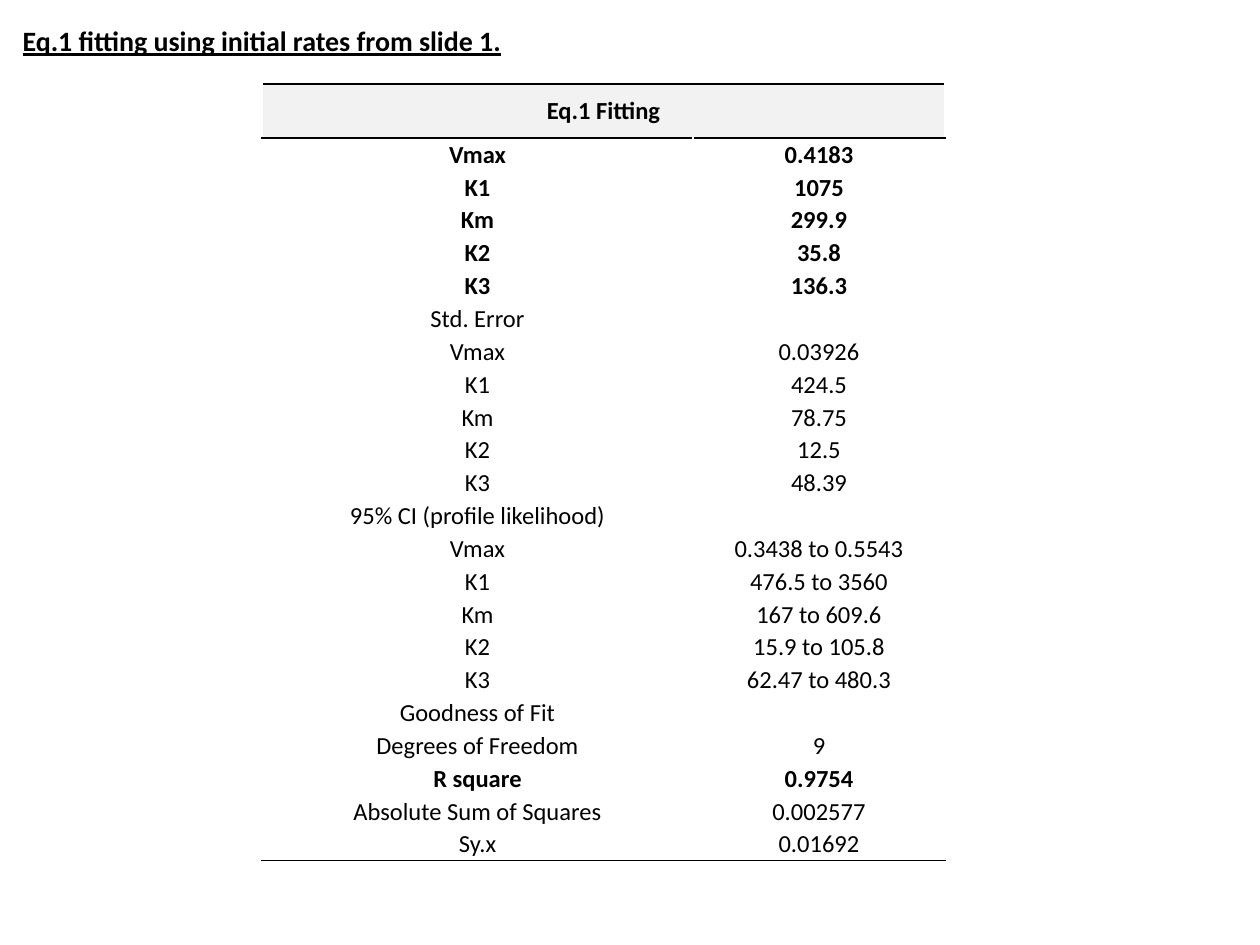
from lxml.etree import SubElement
from pptx import Presentation
from pptx.dml.color import RGBColor
from pptx.enum.text import MSO_ANCHOR, MSO_AUTO_SIZE, PP_ALIGN
from pptx.oxml.ns import qn
from pptx.util import Pt

PX = 914400 / 126
FONT, BLACK, WHITE, HEADER_FILL = "Calibri", "000000", "FFFFFF", "F2F2F2"
CELL_SIZE = 14

TITLE = "Eq.1 fitting using initial rates from slide 1."
HEADER = "Eq.1 Fitting"
PARAMETERS = ["Vmax", "K1", "Km", "K2", "K3"]
BEST_FIT = ["0.4183", "1075", "299.9", "35.8", "136.3"]
STD_ERROR = ["0.03926", "424.5", "78.75", "12.5", "48.39"]
INTERVALS = ["0.3438 to 0.5543", "476.5 to 3560", "167 to 609.6",
             "15.9 to 105.8", "62.47 to 480.3"]
GOODNESS = [("Degrees of Freedom", "9"), ("R square", "0.9754"),
            ("Absolute Sum of Squares", "0.002577"), ("Sy.x", "0.01692")]
ROWS = [
    (HEADER, ""),
    *zip(PARAMETERS, BEST_FIT),
    ("Std. Error", ""),
    *zip(PARAMETERS, STD_ERROR),
    ("95% CI (profile likelihood)", ""),
    *zip(PARAMETERS, INTERVALS),
    ("Goodness of Fit", ""),
    *GOODNESS,
]
BOLD_ROWS = {*range(len(PARAMETERS) + 1), ROWS.index(("R square", "0.9754"))}
COLUMN_WIDTHS = [431, 252]
TABLE_LEFT, TABLE_TOP, TABLE_HEIGHT, HEADER_HEIGHT = 262, 84, 777, 54


def px(length):
    return round(length * PX)


def color(value):
    return RGBColor.from_string(value)


def style_font(font, size, bold):
    font.name, font.size, font.bold = FONT, Pt(size), bold
    font.color.rgb = color(BLACK)


def set_borders(cell, top, bottom):
    properties = cell._tc.get_or_add_tcPr()
    for side, value in (("L", WHITE), ("R", WHITE), ("T", top), ("B", bottom)):
        line = SubElement(properties, qn(f"a:ln{side}"), w=str(Pt(1)))
        fill = SubElement(line, qn("a:solidFill"))
        SubElement(fill, qn("a:srgbClr"), val=value)


def fill_cell(cell, text, bold):
    cell.vertical_anchor = MSO_ANCHOR.MIDDLE
    cell.margin_left = cell.margin_right = cell.margin_top = px(1)
    cell.margin_bottom = 0
    cell.text_frame.text = text
    paragraph = cell.text_frame.paragraphs[0]
    paragraph.alignment = PP_ALIGN.CENTER
    for run in paragraph.runs:
        style_font(run.font, CELL_SIZE, bold)
    if not text:
        end = SubElement(paragraph._p, qn("a:endParaRPr"))
        end.set("sz", str(CELL_SIZE * 100))


def add_title(slide):
    title = slide.shapes.title
    title.left, title.top, title.width, title.height = map(px, (10, 17, 510, 46))
    frame = title.text_frame
    frame.text = TITLE
    frame.word_wrap = False
    frame.auto_size = MSO_AUTO_SIZE.SHAPE_TO_FIT_TEXT
    frame.vertical_anchor = MSO_ANCHOR.TOP
    paragraph = frame.paragraphs[0]
    paragraph.alignment = PP_ALIGN.LEFT
    style_font(paragraph.runs[0].font, 16, True)
    paragraph.runs[0].font.underline = True


def add_fit_table(slide):
    table = slide.shapes.add_table(
        len(ROWS), len(COLUMN_WIDTHS), px(TABLE_LEFT), px(TABLE_TOP),
        px(sum(COLUMN_WIDTHS)), px(TABLE_HEIGHT)).table
    table.first_row = table.horz_banding = False
    for column, width in zip(table.columns, COLUMN_WIDTHS):
        column.width = px(width)
    last = len(ROWS) - 1
    for index, texts in enumerate(ROWS):
        table.rows[index].height = px(
            (TABLE_HEIGHT - HEADER_HEIGHT) / last if index else HEADER_HEIGHT)
        top = BLACK if index <= 1 else WHITE
        bottom = BLACK if index in (0, last) else WHITE
        for cell, text in zip(table.rows[index].cells, texts):
            fill_cell(cell, text, index in BOLD_ROWS)
            set_borders(cell, top, bottom)
            if index:
                cell.fill.background()
            else:
                cell.fill.solid()
                cell.fill.fore_color.rgb = color(HEADER_FILL)
    table.cell(0, 0).merge(table.cell(0, 1))


def main():
    presentation = Presentation()
    presentation.slide_width, presentation.slide_height = px(1260), px(945)
    slide = presentation.slides.add_slide(presentation.slide_layouts[5])
    add_fit_table(slide)
    add_title(slide)
    presentation.save("out.pptx")


if __name__ == "__main__":
    main()
